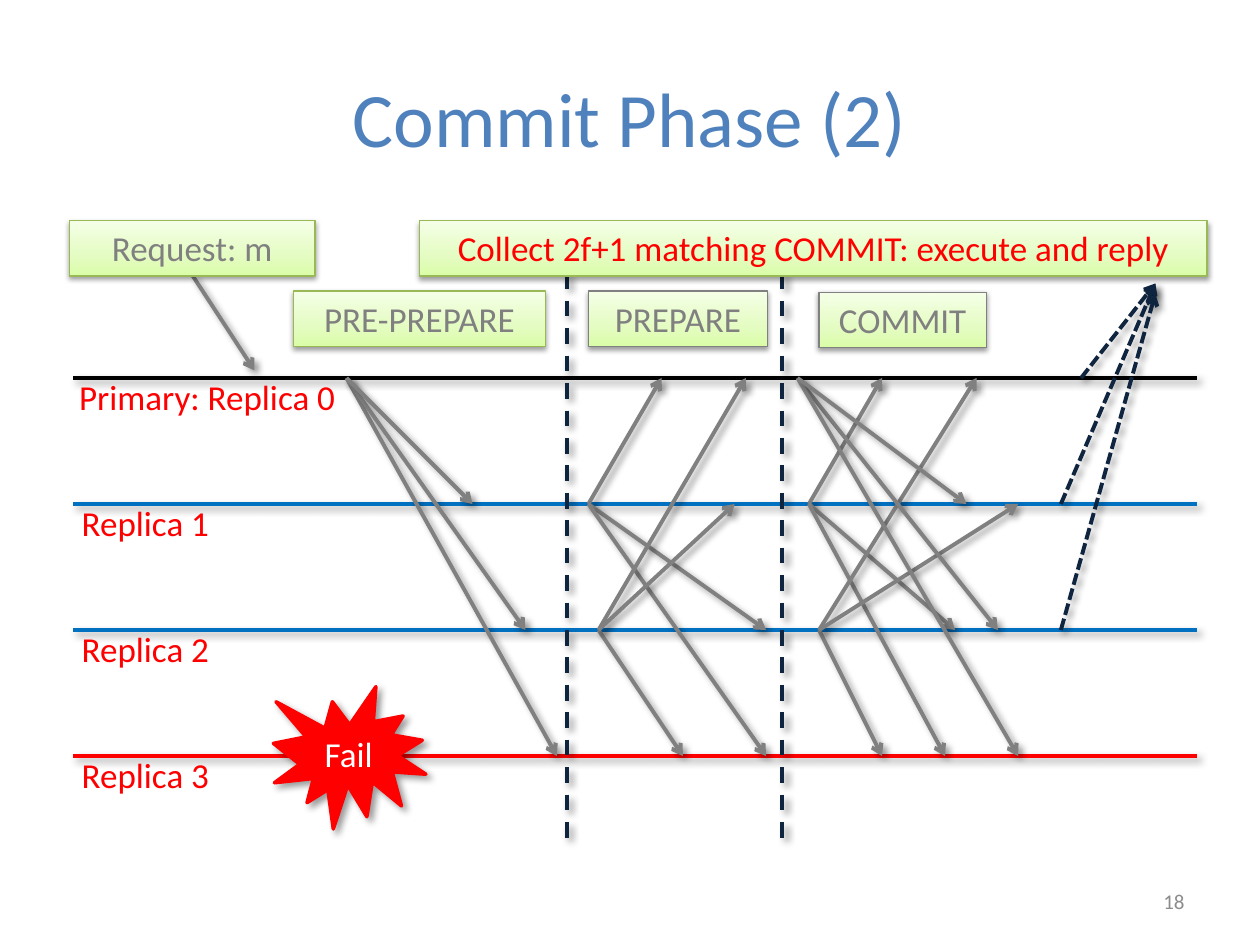
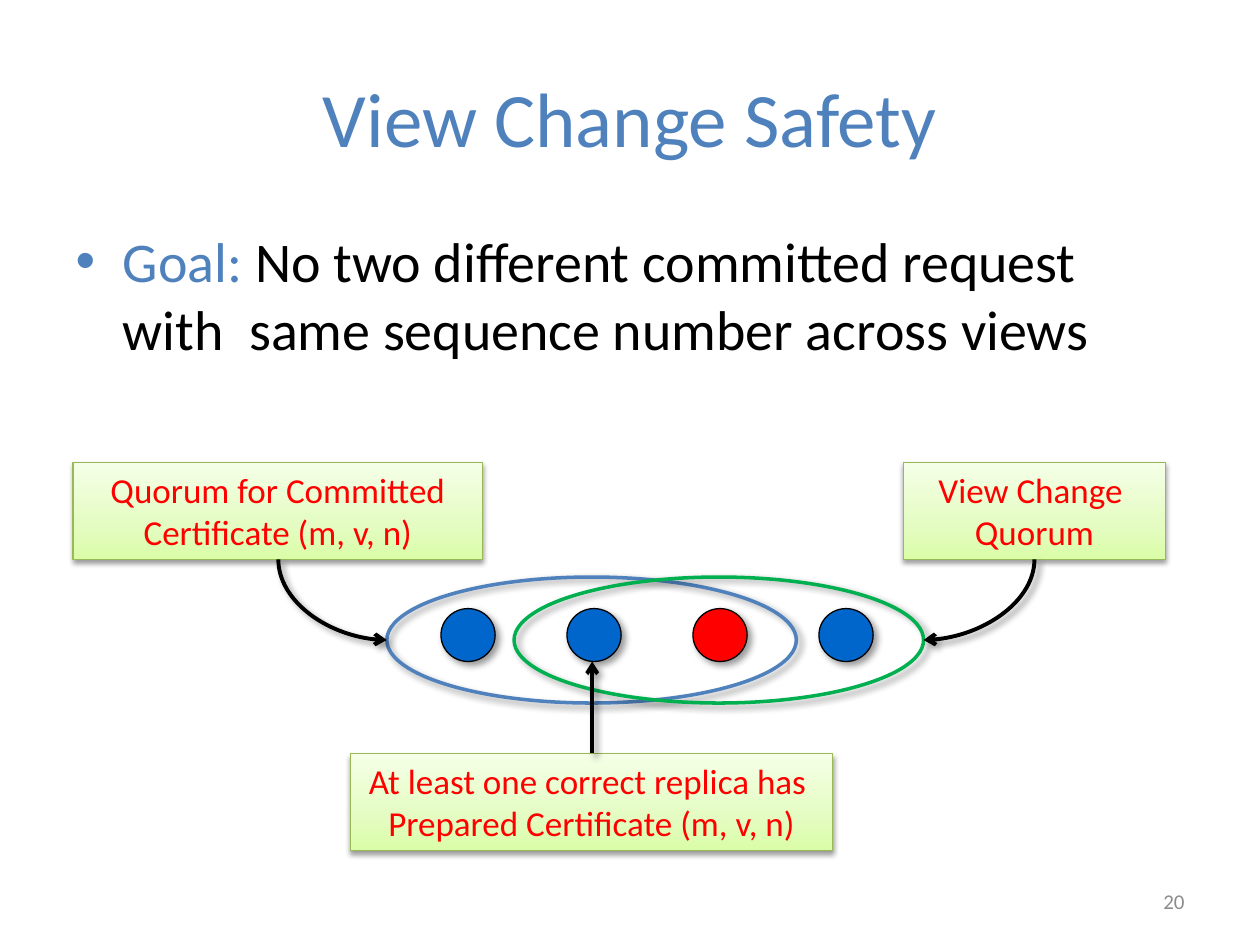
from collections import namedtuple

from lxml import etree
from pptx import Presentation
from pptx.dml.color import RGBColor
from pptx.enum import dml, shapes, text
from pptx.oxml import ns
from pptx.util import Inches, Pt

FONT = "Calibri"
ACCENT = RGBColor(0x4F, 0x81, 0xBD)
NAVY = RGBColor(0x0F, 0x24, 0x3E)
LANE_BLUE = RGBColor(0x00, 0x70, 0xC0)
NODE_BLUE = RGBColor(0x00, 0x66, 0xCC)
RED = RGBColor(0xFF, 0x00, 0x00)
GREEN = RGBColor(0x00, 0xB0, 0x50)
BOX_EDGE = RGBColor(0x98, 0xB9, 0x55)
GREY = RGBColor(0x80, 0x80, 0x80)
PAGE_GREY = RGBColor(0x8C, 0x8C, 0x8C)
BLACK = RGBColor(0x00, 0x00, 0x00)
WHITE = RGBColor(0xFF, 0xFF, 0xFF)
BOX_GRADIENT = [(0, RGBColor(0xDA, 0xFD, 0xA7)),
                (35, RGBColor(0xE4, 0xFC, 0xC2)),
                (100, RGBColor(0xF5, 0xFF, 0xE7))]

Shadow = namedtuple("Shadow", "opacity blur distance angle")
SIDE_SHADOW = Shadow(40, 4, 3, 45)
BOX_SHADOW = Shadow(38, 3.1, 1.6, 90)

Box = namedtuple("Box", "left top width height")
CONTENT = Box(0.5, 1.75, 9, 4.95)
PAGE_NUMBER = Box(7.17, 6.95, 2.33, 0.4)

LANES = [("Primary: Replica 0", BLACK), ("Replica 1", LANE_BLUE),
         ("Replica 2", LANE_BLUE), ("Replica 3", RED)]
# (start x, start lane): [(end x, end lane), ...]
MESSAGES = {
    (2.25, 0): [(3.92, 3), (3.67, 2), (3.25, 1)],
    (4.17, 1): [(4.75, 0), (5.58, 2), (5.58, 3)],
    (4.25, 2): [(4.92, 3), (5.42, 0), (5.33, 1)],
    (5.92, 1): [(6.5, 0), (7.08, 2), (7, 3)],
    (6, 2): [(6.5, 3), (7.25, 0), (7.58, 1)],
    (5.83, 0): [(7.42, 2), (7.58, 3), (7.17, 1)],
}


def child(parent, tag, **attributes):
    return etree.SubElement(parent, ns.qn(tag), attributes)


def add_shadow(shape, shadow):
    effects = child(shape._element.spPr, "a:effectLst")
    outer = child(effects, "a:outerShdw", blurRad=str(Pt(shadow.blur)),
                  dist=str(Pt(shadow.distance)), dir=str(shadow.angle * 60000),
                  rotWithShape="0")
    color = child(outer, "a:srgbClr", val=str(BLACK))
    child(color, "a:alpha", val=str(shadow.opacity * 1000))


def add_run(paragraph, words, size, color):
    run = paragraph.add_run()
    run.text = words
    run.font.name = FONT
    run.font.size = Pt(size)
    run.font.color.rgb = color


def write_lines(frame, lines, size, color, align=text.PP_ALIGN.CENTER):
    for i, words in enumerate(lines):
        paragraph = frame.add_paragraph() if i else frame.paragraphs[0]
        paragraph.alignment = align
        add_run(paragraph, words, size, color)


def add_text(slide, box, words, size, color, align=text.PP_ALIGN.LEFT,
             anchor=text.MSO_ANCHOR.TOP):
    frame = slide.shapes.add_textbox(*map(Inches, box)).text_frame
    frame.word_wrap = True
    frame.vertical_anchor = anchor
    write_lines(frame, [words], size, color, align)


def add_figure(slide, preset, box, fill, edge, weight):
    """Add a preset shape with a side shadow; fill None leaves it hollow."""
    figure = slide.shapes.add_shape(preset, *map(Inches, box))
    if fill is None:
        figure.fill.background()
    else:
        figure.fill.solid()
        figure.fill.fore_color.rgb = fill
    figure.line.color.rgb = edge
    figure.line.width = Pt(weight)
    add_shadow(figure, SIDE_SHADOW)
    return figure


def add_label_box(slide, box, lines, color=RED, edge=BOX_EDGE):
    label = slide.shapes.add_shape(shapes.MSO_SHAPE.RECTANGLE, *map(Inches, box))
    label.fill.gradient()
    label.fill.gradient_angle = 90
    stops = label._element.spPr.find(".//" + ns.qn("a:gsLst"))
    for stop in list(stops):
        stops.remove(stop)
    for position, stop_color in BOX_GRADIENT:
        stop = child(stops, "a:gs", pos=str(position * 1000))
        child(stop, "a:srgbClr", val=str(stop_color))
    label.line.color.rgb = edge
    label.line.width = Pt(0.75)
    add_shadow(label, BOX_SHADOW)
    label.text_frame.vertical_anchor = text.MSO_ANCHOR.TOP
    write_lines(label.text_frame, lines, 20, color)


def add_line(slide, start, end, color, dash=None, arrow=None, curved=False):
    """Draw a line; arrow is a:headEnd (at start) or a:tailEnd (at end)."""
    kind = shapes.MSO_CONNECTOR.CURVE if curved else shapes.MSO_CONNECTOR.STRAIGHT
    line = slide.shapes.add_connector(kind, *map(Inches, (*start, *end)))
    properties = line._element.spPr
    if curved:
        properties.find(ns.qn("a:prstGeom")).set("prst", "curvedConnector2")
    line.line.color.rgb = color
    line.line.width = Pt(2.25)
    if dash:
        line.line.dash_style = dash
    if arrow:
        child(properties.find(ns.qn("a:ln")), arrow, type="arrow")
    add_shadow(line, SIDE_SHADOW)


def start_slide(deck, layout, title, number):
    slide = deck.slides.add_slide(deck.slide_layouts[layout])
    heading = slide.shapes.title
    heading.left, heading.top, heading.width, heading.height = map(
        Inches, (0.5, 0.3, 9, 1.25))
    write_lines(heading.text_frame, [title], 44, ACCENT)
    add_text(slide, PAGE_NUMBER, number, 12, PAGE_GREY,
             text.PP_ALIGN.RIGHT, text.MSO_ANCHOR.MIDDLE)
    return slide


def message_diagram(slide, area):
    def at(x, y):
        return area.left + x, area.top + y

    def on_lane(x, lane):
        return at(x, 1.25 + lane)

    add_line(slide, at(1.03, 0.44), at(1.52, 1.19), GREY, arrow="a:tailEnd")
    for lane, (name, color) in enumerate(LANES):
        add_line(slide, on_lane(0.08, lane), on_lane(9, lane), color)
        # The primary's label sits slightly further left than the others.
        label_x = 0.05 if lane else 0.03
        add_text(slide, (*at(label_x, 1.18 + lane), 2.97, 0.46), name, 20, RED)

    fail = add_figure(slide, shapes.MSO_SHAPE.EXPLOSION1,
                      (*at(1.67, 3.7), 1.21, 1.13), RED, RED, 2)
    fail.text_frame.word_wrap = False
    write_lines(fail.text_frame, ["Fail"], 20, WHITE)

    for x in (4, 5.71):
        add_line(slide, at(x, 0.42), at(x, 4.92), NAVY, dml.MSO_LINE.DASH)
    for start, ends in MESSAGES.items():
        for end in ends:
            add_line(slide, on_lane(*start), on_lane(*end), GREY, arrow="a:tailEnd")
    for lane, (x, end_y) in enumerate([(8.08, 0.5), (7.92, 0.5), (7.92, 0.58)]):
        add_line(slide, on_lane(x, lane), at(8.67, end_y), NAVY,
                 dml.MSO_LINE.SQUARE_DOT, "a:tailEnd")

    for x, y, width, words, color, edge in [
            (0.05, 0, 1.95, "Request: m", GREY, BOX_EDGE),
            (1.83, 0.56, 2, "PRE-PREPARE", GREY, BOX_EDGE),
            (4.17, 0.56, 1.42, "PREPARE", GREY, GREY),
            (6, 0.57, 1.33, "COMMIT", GREY, GREY),
            (2.83, 0, 6.25, "Collect 2f+1 matching COMMIT: execute and reply",
             RED, BOX_EDGE)]:
        add_label_box(slide, (*at(x, y), width, 0.44), [words], color, edge)


def goal_list(slide, area):
    body = slide.placeholders[1]
    body.left, body.top, body.width, body.height = map(Inches, area)
    goal = body.text_frame.paragraphs[0]
    add_run(goal, "Goal: ", 32, ACCENT)
    add_run(goal, "No two different committed request with  same sequence "
            "number across views", 32, BLACK)


def quorum_diagram(slide, area):
    def at(x, y):
        return area.left + x, area.top + y

    oval = shapes.MSO_SHAPE.OVAL
    for i, color in enumerate([NODE_BLUE, NODE_BLUE, RED, NODE_BLUE]):
        add_figure(slide, oval, (*at(3 + i, 3.08), 0.43, 0.42), color, BLACK, 0.75)
    for x, color in [(2.57, ACCENT), (3.58, GREEN)]:
        add_figure(slide, oval, (*at(x, 2.83), 3.25, 1), None, color, 2)

    for x, y, width, lines in [
            (0.08, 1.92, 3.25, ["Quorum for Committed Certificate (m, v, n)"]),
            (2.28, 4.23, 3.83, ["At least one correct replica has ",
                                "Prepared Certificate (m, v, n)"]),
            (6.67, 1.92, 2.08, ["View Change ", "Quorum"])]:
        add_label_box(slide, (*at(x, y), width, 0.77), lines)

    add_line(slide, at(4.2, 4.23), at(4.2, 3.5), BLACK, arrow="a:tailEnd")
    for oval_x, label_x in [(2.57, 1.71), (6.83, 7.71)]:
        add_line(slide, at(oval_x, 3.33), at(label_x, 2.69), BLACK,
                 arrow="a:headEnd", curved=True)


def main():
    deck = Presentation()
    deck.slide_width, deck.slide_height = Inches(10), Inches(7.5)
    commit = start_slide(deck, 5, "Commit Phase (2)", "18")
    message_diagram(commit, CONTENT)
    safety = start_slide(deck, 1, "View Change Safety", "20")
    goal_list(safety, CONTENT)
    quorum_diagram(safety, CONTENT)
    deck.save("out.pptx")


if __name__ == "__main__":
    main()
